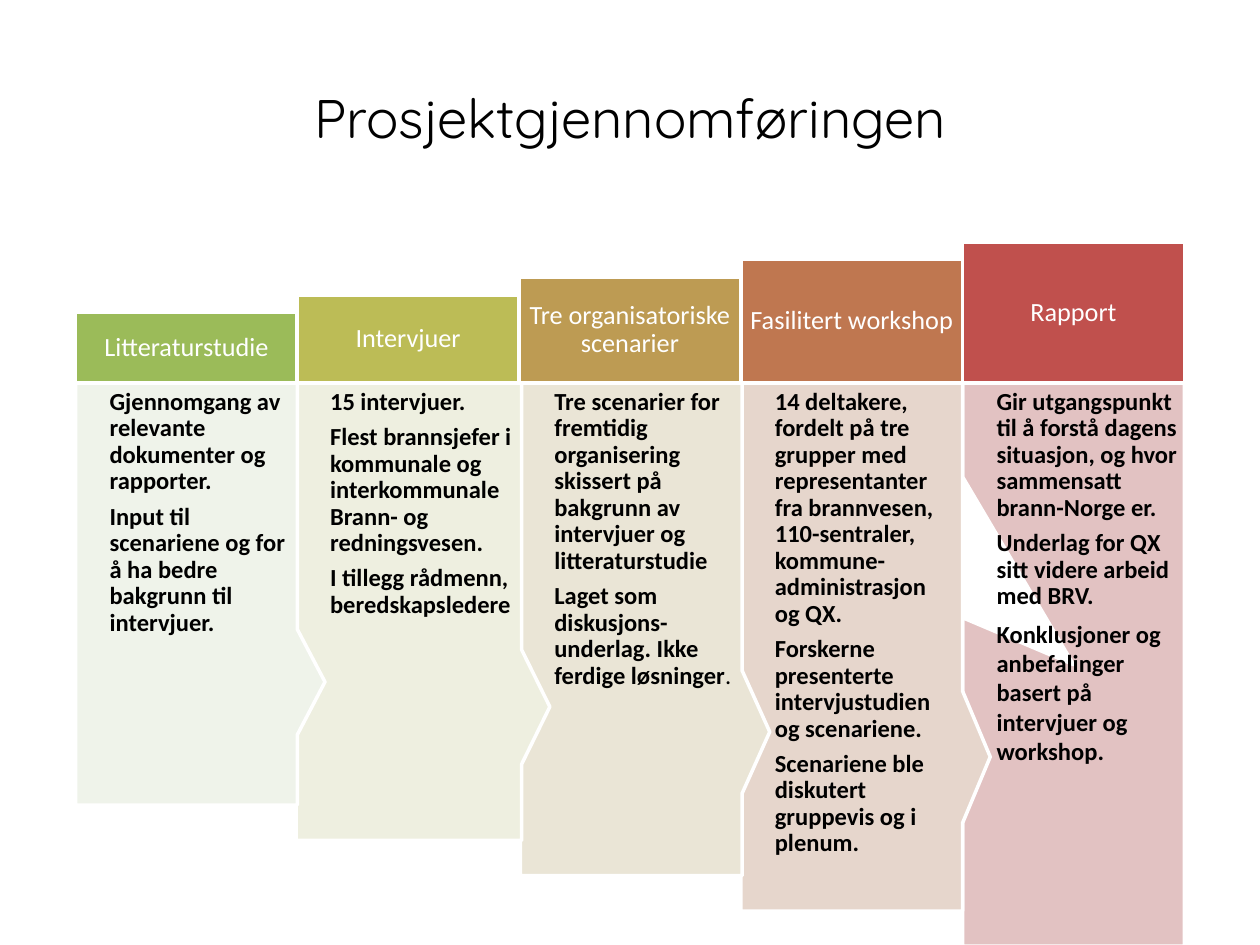
from dataclasses import dataclass

from pptx import Presentation
from pptx.dml.color import RGBColor
from pptx.enum.shapes import MSO_SHAPE
from pptx.enum.text import MSO_ANCHOR, PP_ALIGN
from pptx.util import Inches, Pt

TITLE = "Prosjektgjennomføringen"


@dataclass(frozen=True)
class Theme:
    title_font: str = "Quicksand"
    font: str = "Calibri"
    title_size: float = 31
    header_size: float = 15
    body_size: float = 14
    paragraph_gap: float = 5
    line_spacing: float = 0.9
    outline_width: float = 2
    black: str = "000000"
    white: str = "FFFFFF"


@dataclass(frozen=True)
class Stage:
    heading: str
    header_color: str
    body_color: str
    paragraphs: tuple
    plain_ending: str = ""
    pointer: tuple = (0.625, 0.208)
    last_spacing: float = 0.9
    body_shift: float = 0
    extra_width: float = 0


THEME = Theme()
STAGES = [
    Stage("Litteraturstudie", "9BBB59", "EFF3EA", (
        "Gjennomgang av relevante dokumenter og rapporter.",
        "Input til scenariene og for å ha bedre bakgrunn til intervjuer.")),
    Stage("Intervjuer", "BCBC56", "EEEFE0", (
        "15 intervjuer.",
        "Flest brannsjefer i kommunale og interkommunale Brann- og redningsvesen.",
        "I tillegg rådmenn, beredskapsledere"),
        body_shift=-0.01, extra_width=0.03),
    Stage("Tre organisatoriske scenarier", "BD9B53", "EAE5D6", (
        "Tre scenarier for fremtidig organisering skissert på bakgrunn av "
        "intervjuer og litteraturstudie",
        "Laget som diskusjons-underlag. Ikke ferdige løsninger"),
        plain_ending=".", body_shift=0.01),
    Stage("Fasilitert workshop", "BF7750", "E6D6CC", (
        "14 deltakere, fordelt på tre grupper med representanter fra "
        "brannvesen, 110-sentraler, kommune-administrasjon og QX.",
        "Forskerne presenterte intervjustudien og scenariene.",
        "Scenariene ble diskutert gruppevis og i plenum.")),
    Stage("Rapport", "C0504D", "E2C2C2", (
        "Gir utgangspunkt til å forstå dagens situasjon, og hvor sammensatt "
        "brann-Norge er.",
        "Underlag for QX sitt videre arbeid med BRV.",
        "Konklusjoner og anbefalinger basert på intervjuer og workshop."),
        pointer=(0, 0), last_spacing=1.0),
]

# Grid in inches: headers grow up and bodies grow down from one baseline
LEFT, BASELINE, COLUMN = 0.6, 3.04, 1.76
HEADER_HEIGHT, HEADER_STEP = 0.56, 0.14
BODY_HEIGHT, BODY_STEP = 3.35, 0.28
TEXT_INDENT, INSET = 0.22, 0.05


def add_panel(slide, preset, box, color):
    shape = slide.shapes.add_shape(preset, *map(Inches, box))
    shape.shadow.inherit = False
    shape.fill.solid()
    shape.fill.fore_color.rgb = RGBColor.from_string(color)
    shape.line.color.rgb = RGBColor.from_string(THEME.white)
    shape.line.width = Pt(THEME.outline_width)
    return shape


def write_text(shape, paragraphs, size, color, font=THEME.font, bold=False,
               centred=False, inset=INSET):
    """Fill a shape with uniformly styled paragraphs and return them."""
    frame = shape.text_frame
    frame.word_wrap = True
    frame.vertical_anchor = MSO_ANCHOR.MIDDLE if centred else MSO_ANCHOR.TOP
    frame.margin_left = frame.margin_right = Inches(inset)
    frame.margin_top = frame.margin_bottom = Inches(INSET)
    frame.text = "\n".join(paragraphs)
    for paragraph in frame.paragraphs:
        paragraph.alignment = PP_ALIGN.CENTER if centred else PP_ALIGN.LEFT
        paragraph.line_spacing = THEME.line_spacing
        paragraph.space_after = Pt(THEME.paragraph_gap)
        paragraph.font.name = font
        paragraph.font.size = Pt(size)
        paragraph.font.bold = bold
        paragraph.font.color.rgb = RGBColor.from_string(color)
    return frame.paragraphs


def add_stage(slide, index, stage):
    left = LEFT + index * COLUMN
    body_left = left + stage.body_shift
    body_width = COLUMN + stage.extra_width
    body_height = BODY_HEIGHT + index * BODY_STEP
    callout = add_panel(slide, MSO_SHAPE.RECTANGULAR_CALLOUT,
                        (body_left, BASELINE, body_width, body_height), stage.body_color)
    callout.adjustments[0], callout.adjustments[1] = stage.pointer

    text_box = slide.shapes.add_textbox(*map(Inches, (
        body_left + TEXT_INDENT, BASELINE, body_width - TEXT_INDENT, body_height)))
    last = write_text(text_box, stage.paragraphs, THEME.body_size, THEME.black, bold=True)[-1]
    last.line_spacing = stage.last_spacing
    if stage.plain_ending:
        ending = last.add_run()
        ending.text = stage.plain_ending
        ending.font.bold = False

    header_height = HEADER_HEIGHT + index * HEADER_STEP
    header = add_panel(slide, MSO_SHAPE.RECTANGLE,
                       (left, BASELINE - header_height, COLUMN, header_height),
                       stage.header_color)
    write_text(header, [stage.heading], THEME.header_size, THEME.white, centred=True)


def main():
    presentation = Presentation()
    presentation.slide_width, presentation.slide_height = Inches(10), Inches(7.5)
    slide = presentation.slides.add_slide(presentation.slide_layouts[6])

    title = slide.shapes.add_textbox(*map(Inches, (0.5, 0.3, 9, 1.25)))
    paragraph = write_text(title, [TITLE], THEME.title_size, THEME.black,
                           font=THEME.title_font, centred=True, inset=0.1)[0]
    paragraph.line_spacing, paragraph.space_after = 1.0, Pt(0)

    # The rightmost stage lies at the back so each pointer overlaps the next one
    for index, stage in reversed(list(enumerate(STAGES))):
        add_stage(slide, index, stage)
    presentation.save("out.pptx")


if __name__ == "__main__":
    main()
